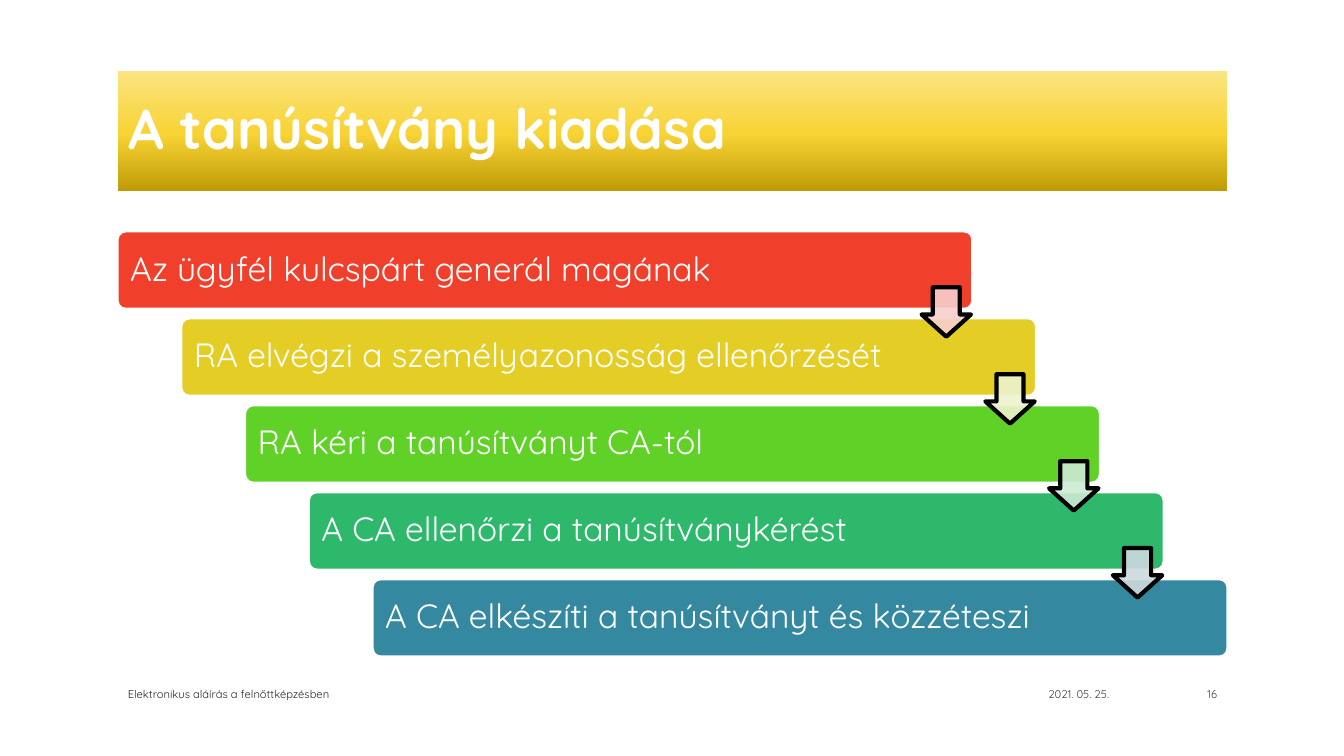
import copy

import pptx
import pptx.dml.color
import pptx.enum.shapes
import pptx.enum.text
import pptx.oxml
import pptx.oxml.ns
import pptx.util

Inches = pptx.util.Inches
Pt = pptx.util.Pt
ALIGN = pptx.enum.text.PP_ALIGN
ANCHOR = pptx.enum.text.MSO_ANCHOR
SHAPE = pptx.enum.shapes.MSO_SHAPE

COLORS = {
    "white": "FFFFFF",
    "black": "000000",
    "gold_dark": "BF9C06",
    "gold": "F8D335",
    "gold_light": "FBE482",
    "footer": "262626",
    "date": "404040",
}
STEPS = [
    ("Az ügyfél kulcspárt generál magának", "F03F2B"),
    ("RA elvégzi a személyazonosság ellenőrzését", "E4CD25"),
    ("RA kéri a tanúsítványt CA-tól", "60D127"),
    ("A CA ellenőrzi a tanúsítványkérést", "2EB86B"),
    ("A CA elkészíti a tanúsítványt és közzéteszi", "3488A0"),
]
ARROW_FILLS = ["F9CFCD", "EDF2CC", "CCEAD3", "CEDADF"]
LEFT, WIDTH = 1.17, 11
STEP_TOP, STEP_WIDTH, STEP_HEIGHT = 2.3, 8.47, 0.76
STEP_RIGHT = (WIDTH - STEP_WIDTH) / (len(STEPS) - 1)
STEP_DOWN = 0.8625
ARROW_LEFT, ARROW_TOP, ARROW_SIZE = 9.14, 2.85, 0.49


def rgb(value):
    return pptx.dml.color.RGBColor.from_string(value)


def set_attributes(target, values):
    for name, value in values.items():
        setattr(target, name, value)


def write_text(shape, text, size, color, anchor, align=ALIGN.LEFT, spacing=1.0, bold=False):
    frame = shape.text_frame
    frame.text = text
    set_attributes(frame, {
        "word_wrap": True,
        "auto_size": pptx.enum.text.MSO_AUTO_SIZE.NONE,
        "vertical_anchor": anchor,
    })
    paragraph = frame.paragraphs[0]
    set_attributes(paragraph, {"alignment": align, "line_spacing": spacing})
    font = paragraph.runs[0].font
    set_attributes(font, {"name": "Quicksand", "size": Pt(size), "bold": bold})
    font.color.rgb = rgb(color)


def fill_gradient(shape, stops):
    fill = shape.fill
    fill.gradient()
    fill.gradient_angle = 90
    first = fill.gradient_stops[0]
    stop_list = shape._element.spPr.find(".//" + pptx.oxml.ns.qn("a:gsLst"))
    stop_list.insert(1, copy.deepcopy(stop_list[0]))
    for stop, (position, color) in zip(fill.gradient_stops, stops):
        stop.position = position
        stop.color.rgb = rgb(color)


def add_title(slide, text):
    title = slide.shapes.title
    set_attributes(title, {
        "left": Inches(LEFT), "top": Inches(0.7),
        "width": Inches(WIDTH), "height": Inches(1.2),
    })
    fill_gradient(title, [
        (0, COLORS["gold_dark"]), (0.48, COLORS["gold"]), (1, COLORS["gold_light"]),
    ])
    write_text(title, text, 40, COLORS["white"], ANCHOR.MIDDLE, spacing=0.9, bold=True)


def add_block(shapes, kind, box, adjustments, fill, line, line_width):
    shape = shapes.add_shape(kind, *map(Inches, box))
    shape.shadow.inherit = False
    shape.fill.solid()
    shape.fill.fore_color.rgb = rgb(fill)
    shape.line.color.rgb = rgb(line)
    shape.line.width = Pt(line_width)
    for index, value in enumerate(adjustments):
        shape.adjustments[index] = value
    return shape


def add_step(shapes, index, text, color):
    box = (LEFT + index * STEP_RIGHT, STEP_TOP + index * STEP_DOWN, STEP_WIDTH, STEP_HEIGHT)
    step = add_block(shapes, SHAPE.ROUNDED_RECTANGLE, box, [0.1], color, COLORS["white"], 1)
    write_text(step, text, 24, COLORS["white"], ANCHOR.MIDDLE, spacing=0.9)


def add_arrow(shapes, index, color):
    box = (ARROW_LEFT + index * STEP_RIGHT, ARROW_TOP + index * STEP_DOWN, ARROW_SIZE, ARROW_SIZE)
    arrow = add_block(shapes, SHAPE.DOWN_ARROW, box, [0.55, 0.45], color, COLORS["black"], 3)
    fill_color = arrow._element.spPr.find(
        pptx.oxml.ns.qn("a:solidFill") + "/" + pptx.oxml.ns.qn("a:srgbClr"))
    fill_color.append(pptx.oxml.parse_xml(
        f'<a:alpha {pptx.oxml.ns.nsdecls("a")} val="90000"/>'))


def add_footer(slide, text, left, width, color, align):
    footer = slide.shapes.add_textbox(*map(Inches, (left, 6.6, width, 0.4)))
    write_text(footer, text, 8, color, ANCHOR.BOTTOM, align)


def main():
    presentation = pptx.Presentation()
    set_attributes(presentation, {"slide_width": Inches(13.33), "slide_height": Inches(7.5)})
    slide = presentation.slides.add_slide(presentation.slide_layouts[5])
    add_title(slide, "A tanúsítvány kiadása")
    process = slide.shapes.add_group_shape()
    for index, (text, color) in enumerate(STEPS):
        add_step(process.shapes, index, text, color)
    for index, color in enumerate(ARROW_FILLS):
        add_arrow(process.shapes, index, color)
    add_footer(slide, "2021. 05. 25.", 7.94, 3.16, COLORS["date"], ALIGN.RIGHT)
    add_footer(slide, "Elektronikus aláírás a felnőttképzésben", LEFT, 6.36,
               COLORS["footer"], ALIGN.LEFT)
    add_footer(slide, "16", 11.25, 0.92, COLORS["date"], ALIGN.RIGHT)
    presentation.save("out.pptx")


if __name__ == "__main__":
    main()
